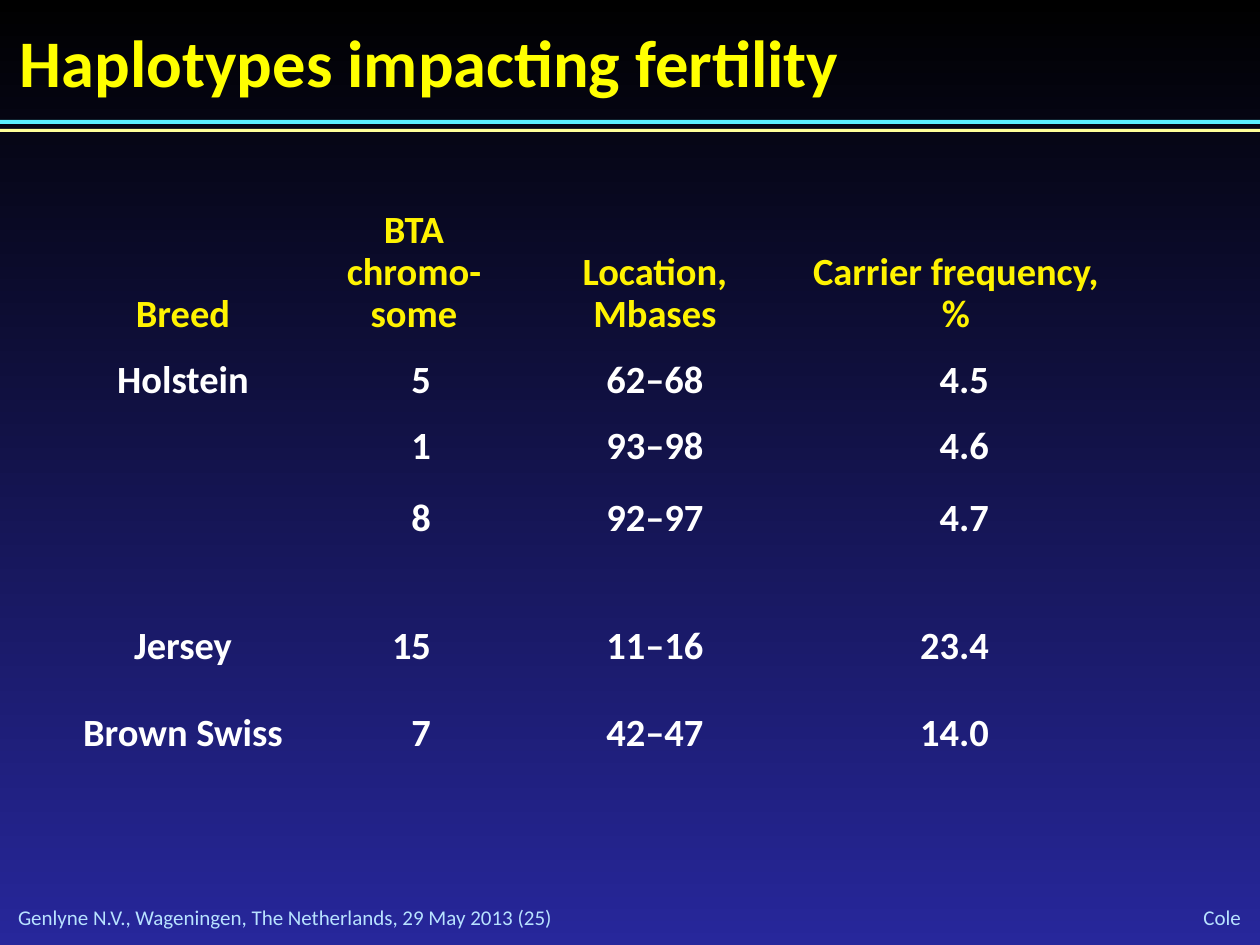
"""Build the slide on haplotypes that affect fertility."""
from pptx import Presentation
from pptx import util as u
from pptx.dml.color import RGBColor
from pptx.enum import shapes, text

PX = 914400 // 126
FONT = "Calibri"
NO_STYLE = "{2D5ABB26-0587-4C30-8999-92F81FD0307C}"
LEFT, CENTER, RIGHT = text.PP_ALIGN.LEFT, text.PP_ALIGN.CENTER, text.PP_ALIGN.RIGHT

BACKGROUND = ["000000", "27279B"]
RULES = [(120, 4, "5BEFFF"), (129, 3, "FFFF99")]
TEXTS = [
    ("Haplotypes impacting fertility", (20, 20, 1134, 81), 38, "FFFF00", True, LEFT),
    ("Genlyne N.V., Wageningen, The Netherlands, 29 May 2013 (25)",
     (18, 905, 728, 25), 12, "B8E2FF", False, LEFT),
    ("Cole", (1099, 904, 142, 26), 12, "B8E2FF", False, RIGHT),
]
ROWS = [
    ("Breed", "BTA chromo-some", "Location, Mbases", "Carrier frequency, %"),
    ("Holstein", "5", "62–68", "4.5"),
    ("", "1", "93–98", "4.6"),
    ("", "8", "92–97", "4.7"),
    ("Jersey", "15", "11–16", "23.4"),
    ("Brown Swiss", "7", "42–47", "14.0"),
]
TABLE_LEFT, TABLE_TOP = 53, 179
COLUMN_WIDTHS = [260, 202, 280, 322]
ROW_HEIGHTS = [165, 66, 72, 128, 87, 87]
NUMBER_MARGINS = {1: 84, 3: 128}


def px(value):
    return u.Emu(value * PX)


def color(value):
    return RGBColor.from_string(value)


def style(paragraph, size, hex_color, bold, alignment):
    paragraph.alignment = alignment
    font = paragraph.font
    font.name, font.size, font.bold = FONT, u.Pt(size), bold
    font.color.rgb = color(hex_color)


def paint_background(slide):
    fill = slide.background.fill
    fill.gradient()
    fill.gradient_angle = 270
    for stop, hex_color in zip(fill.gradient_stops, BACKGROUND):
        stop.color.rgb = color(hex_color)


def add_rule(slide, top, height, hex_color):
    shape = slide.shapes.add_shape(
        shapes.MSO_SHAPE.RECTANGLE, 0, px(top), px(1260), px(height))
    shape.shadow.inherit = False
    shape.fill.solid()
    shape.fill.fore_color.rgb = color(hex_color)
    shape.line.fill.background()


def add_text(slide, words, box, size, hex_color, bold, alignment):
    frame = slide.shapes.add_textbox(*map(px, box)).text_frame
    frame.word_wrap = True
    frame.vertical_anchor = text.MSO_ANCHOR.MIDDLE
    frame.margin_left = frame.margin_right = frame.margin_top = frame.margin_bottom = 0
    frame.text = words
    style(frame.paragraphs[0], size, hex_color, bold, alignment)


def fill_cell(cell, row, column, words):
    cell.fill.background()
    cell.text = words
    paragraph = cell.text_frame.paragraphs[0]
    if row == 0:
        cell.vertical_anchor = text.MSO_ANCHOR.BOTTOM
        style(paragraph, 22, "FFF301", True, CENTER)
        paragraph.line_spacing = u.Pt(24)
        return
    cell.margin_top = u.Inches(0.1)
    cell.margin_bottom = u.Inches(0.05 if row == 1 else 0.1)
    is_number = column in NUMBER_MARGINS
    style(paragraph, 22, "FFFFFF", True, RIGHT if is_number else CENTER)
    if is_number:
        cell.margin_right = px(NUMBER_MARGINS[column])


def add_haplotype_table(slide):
    frame = slide.shapes.add_table(
        len(ROWS), len(COLUMN_WIDTHS), px(TABLE_LEFT), px(TABLE_TOP),
        px(sum(COLUMN_WIDTHS)), px(sum(ROW_HEIGHTS)))
    table = frame.table
    table.horz_banding = False
    frame._element.xpath(".//a:tableStyleId")[0].text = NO_STYLE
    for column, width in zip(table.columns, COLUMN_WIDTHS):
        column.width = px(width)
    for row, height in zip(table.rows, ROW_HEIGHTS):
        row.height = px(height)
    for row, values in enumerate(ROWS):
        for column, words in enumerate(values):
            fill_cell(table.cell(row, column), row, column, words)


def main():
    presentation = Presentation()
    presentation.slide_width, presentation.slide_height = px(1260), px(945)
    slide = presentation.slides.add_slide(presentation.slide_layouts[6])
    paint_background(slide)
    for rule in RULES:
        add_rule(slide, *rule)
    for item in TEXTS:
        add_text(slide, *item)
    add_haplotype_table(slide)
    presentation.save("out.pptx")


if __name__ == "__main__":
    main()
